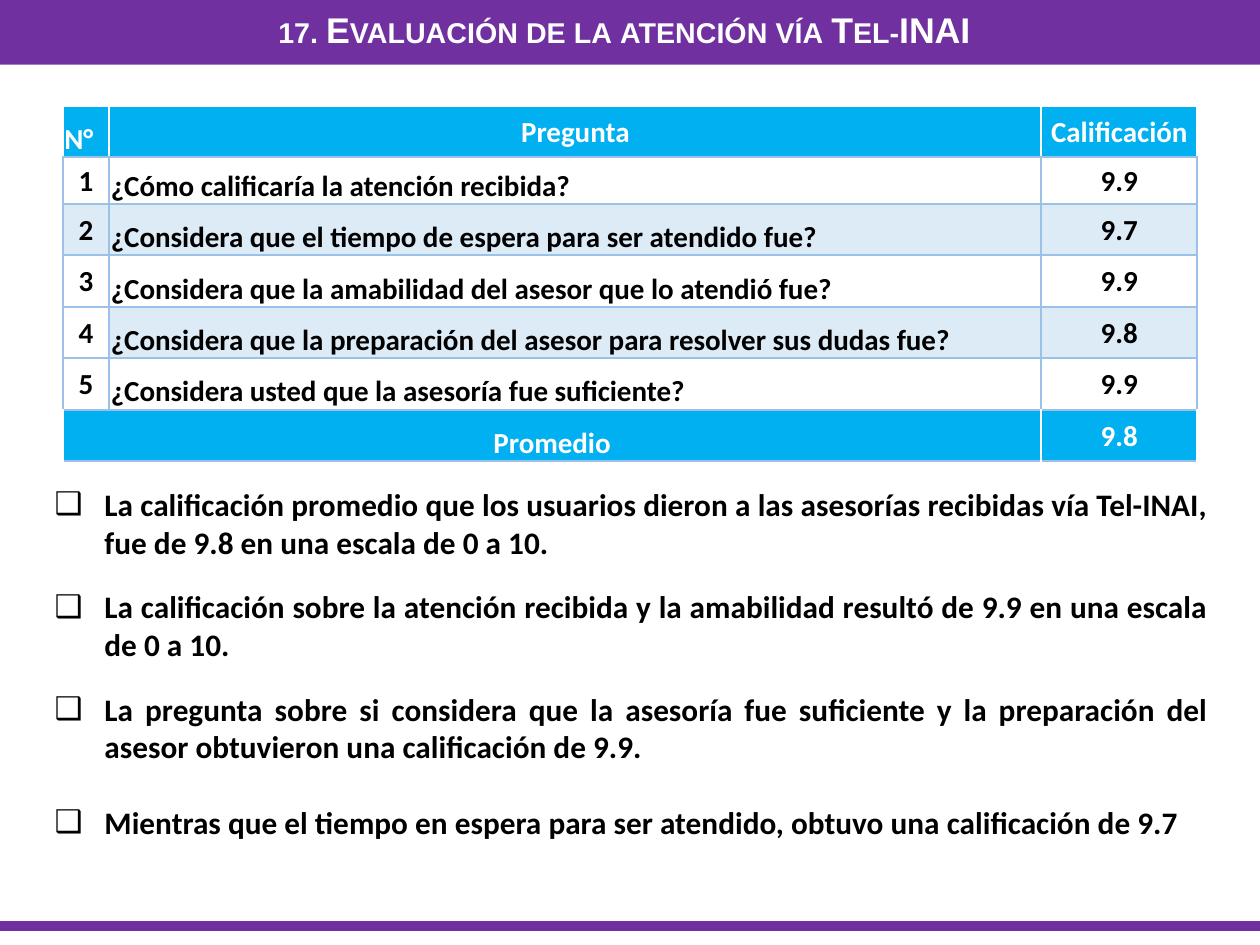
from dataclasses import dataclass

from lxml import etree
from pptx import Presentation
from pptx import util as u
from pptx.dml.color import RGBColor
from pptx.enum import shapes, text
from pptx.oxml import ns

# Palette
PURPLE = RGBColor(0x70, 0x30, 0xA0)
CYAN = RGBColor(0x00, 0xB0, 0xF0)
PALE_BLUE = RGBColor(0xDD, 0xEB, 0xF7)
BORDER_BLUE = RGBColor(0x9B, 0xC2, 0xE6)
WHITE = RGBColor(0xFF, 0xFF, 0xFF)
BLACK = RGBColor(0x00, 0x00, 0x00)

# Slide grid: 80 columns by 60 rows
WIDTH, HEIGHT = u.Inches(7.84), u.Inches(5.88)
COLUMNS, ROWS = 80, 60

LEFT, CENTER, JUSTIFY = text.PP_ALIGN.LEFT, text.PP_ALIGN.CENTER, text.PP_ALIGN.JUSTIFY
TOP, MIDDLE, BOTTOM = text.MSO_ANCHOR.TOP, text.MSO_ANCHOR.MIDDLE, text.MSO_ANCHOR.BOTTOM

TITLE_FORMAT = {"name": "Arial", "size": u.Pt(16), "bold": True}
BODY_FORMAT = {"name": "Calibri", "size": u.Pt(14), "bold": True}
CELL_FORMAT = {"name": "Calibri", "size": u.Pt(13), "bold": True}
CELL_MARGINS = {"margin_left": u.Inches(0.01), "margin_right": u.Inches(0.01),
                "margin_top": u.Inches(0.01), "margin_bottom": 0}


def across(columns: float) -> int:
    return round(WIDTH * columns / COLUMNS)


def down(rows: float) -> int:
    return round(HEIGHT * rows / ROWS)


@dataclass
class Area:
    left: float
    top: float
    width: float
    height: float

    def lengths(self) -> tuple:
        return across(self.left), down(self.top), across(self.width), down(self.height)


@dataclass
class Finding:
    wording: str
    space_before: float


@dataclass
class TableRow:
    texts: tuple
    fills: tuple
    color: RGBColor = BLACK
    height: float = 3.27
    anchors: tuple = (MIDDLE, BOTTOM, MIDDLE)
    alignments: tuple = (CENTER, LEFT, CENTER)
    borders: tuple = (BORDER_BLUE,) * 4  # left, right, top, bottom


TITLE = "17. Evaluación de la atención vía Tel-INAI"
BAND_AREA = Area(0, 0, COLUMNS, 4.1)
TITLE_AREA = Area(-0.1, 0, 79.5, 3.78)
BODY_AREA = Area(2.45, 30.3, 75.3, 25.4)
TABLE_AREA = Area(3.98, 6.73, 72.04, 22.58)
TABLE_COLUMNS = (2.96, 59.18, 9.9)
FOOT_LINE_ROW = 58.78

PLAIN, TINTED, STRONG = (WHITE,) * 3, (PALE_BLUE,) * 3, (CYAN,) * 3
TABLE_ROWS = [
    TableRow(("N°", "Pregunta", "Calificación"), STRONG, WHITE,
             anchors=(BOTTOM, MIDDLE, MIDDLE), alignments=(LEFT, CENTER, CENTER),
             borders=(WHITE, WHITE, WHITE, BORDER_BLUE)),
    TableRow(("1", "¿Cómo calificaría la atención recibida?", "9.9"), PLAIN, height=2.96),
    TableRow(("2", "¿Considera que el tiempo de espera para ser atendido fue?", "9.7"), TINTED),
    TableRow(("3", "¿Considera que la amabilidad del asesor que lo atendió fue?", "9.9"), PLAIN),
    TableRow(("4", "¿Considera que la preparación del asesor para resolver sus dudas fue?", "9.8"),
             (WHITE, PALE_BLUE, PALE_BLUE)),
    TableRow(("5", "¿Considera usted que la asesoría fue suficiente?", "9.9"), PLAIN),
    TableRow(("Promedio", "", "9.8"), STRONG, WHITE, anchors=(BOTTOM, BOTTOM, MIDDLE),
             alignments=(CENTER,) * 3, borders=(WHITE, WHITE, BORDER_BLUE, BORDER_BLUE)),
]

FINDINGS = [
    Finding("La calificación promedio que los usuarios dieron a las asesorías recibidas "
            "vía Tel-INAI, fue de 9.8 en una escala de 0 a 10.", 0),
    Finding("La calificación sobre la atención recibida y la amabilidad resultó de 9.9 "
            "en una escala de 0 a 10.", 12.2),
    Finding("La pregunta sobre si considera que la asesoría fue suficiente y la preparación "
            "del asesor obtuvieron una calificación de 9.9.", 12.2),
    Finding("Mientras que el tiempo en espera para ser atendido, obtuvo una calificación de 9.7", 17.1),
]


def apply(target, values: dict) -> None:
    for name, value in values.items():
        setattr(target, name, value)


def add_xml(parent, tag: str, **attributes: str):
    return etree.SubElement(parent, ns.qn(tag), attributes)


def write(paragraph, wording: str, values: dict, color: RGBColor):
    run = paragraph.add_run()
    run.text = wording
    apply(run.font, values)
    run.font.color.rgb = color
    return run


def place(slide, placeholder, area: Area):
    """Moves a placeholder to its area, in front of what is already drawn."""
    slide.shapes._spTree.append(placeholder._element)
    apply(placeholder, dict(zip(("left", "top", "width", "height"), area.lengths())))
    frame = placeholder.text_frame
    apply(frame, {"auto_size": text.MSO_AUTO_SIZE.NONE, "word_wrap": True, "vertical_anchor": TOP})
    return frame


def draw_bars(slide) -> None:
    line = slide.shapes.add_connector(shapes.MSO_CONNECTOR.STRAIGHT, 0, down(FOOT_LINE_ROW),
                                      WIDTH, down(FOOT_LINE_ROW))
    line.line.color.rgb = PURPLE
    line.line.width = u.Pt(4.5)
    add_xml(line._element.spPr, "a:effectLst")
    band = slide.shapes.add_shape(shapes.MSO_SHAPE.RECTANGLE, *BAND_AREA.lengths())
    band.shadow.inherit = False
    band.fill.solid()
    band.fill.fore_color.rgb = PURPLE
    band.line.fill.background()


def draw_title(slide) -> None:
    paragraph = place(slide, slide.shapes.title, TITLE_AREA).paragraphs[0]
    paragraph.alignment = CENTER
    properties = write(paragraph, TITLE, TITLE_FORMAT, WHITE)._r.get_or_add_rPr()
    properties.set("cap", "small")
    # Soft text shadow, which follows the fill
    effects = add_xml(properties, "a:effectLst")
    shadow = add_xml(effects, "a:outerShdw", blurRad="38100", dist="38100", dir="2700000", algn="tl")
    add_xml(add_xml(shadow, "a:srgbClr", val=str(BLACK)), "a:alpha", val="43000")
    properties.find(ns.qn("a:solidFill")).addnext(effects)


def draw_findings(slide) -> None:
    frame = place(slide, slide.placeholders[1], BODY_AREA)
    for index, finding in enumerate(FINDINGS):
        paragraph = frame.add_paragraph() if index else frame.paragraphs[0]
        properties = paragraph._p.get_or_add_pPr()
        indent = u.Inches(0.31)
        properties.set("marL", str(indent))
        properties.set("indent", str(-indent))
        add_xml(properties, "a:buFont", typeface="Arial")
        add_xml(properties, "a:buChar", char="❑")
        apply(paragraph, {"alignment": JUSTIFY, "space_before": u.Pt(finding.space_before),
                          "space_after": u.Pt(0)})
        write(paragraph, finding.wording, BODY_FORMAT, BLACK)


def draw_cell(cell, row: TableRow, column: int) -> None:
    properties = cell._tc.get_or_add_tcPr()
    for side, color in zip("LRTB", row.borders):
        border = add_xml(properties, f"a:ln{side}", w=str(u.Pt(1)))
        add_xml(add_xml(border, "a:solidFill"), "a:srgbClr", val=str(color))
    cell.fill.solid()
    cell.fill.fore_color.rgb = row.fills[column]
    apply(cell, {**CELL_MARGINS, "vertical_anchor": row.anchors[column]})
    if row.texts[column]:
        paragraph = cell.text_frame.paragraphs[0]
        paragraph.alignment = row.alignments[column]
        write(paragraph, row.texts[column], CELL_FORMAT, row.color)


def draw_table(slide) -> None:
    table = slide.shapes.add_table(len(TABLE_ROWS), len(TABLE_COLUMNS), *TABLE_AREA.lengths()).table
    apply(table, {"first_row": False, "horz_banding": False})
    for column, width in zip(table.columns, TABLE_COLUMNS):
        column.width = across(width)
    for index, row in enumerate(TABLE_ROWS):
        table.rows[index].height = down(row.height)
        for column in range(len(TABLE_COLUMNS)):
            draw_cell(table.cell(index, column), row, column)
    last = len(TABLE_ROWS) - 1
    table.cell(last, 0).merge(table.cell(last, 1))


def main() -> None:
    presentation = Presentation()
    apply(presentation, {"slide_width": WIDTH, "slide_height": HEIGHT})
    slide = presentation.slides.add_slide(presentation.slide_layouts[1])
    for draw in (draw_bars, draw_title, draw_findings, draw_table):
        draw(slide)
    presentation.save("out.pptx")


if __name__ == "__main__":
    main()
